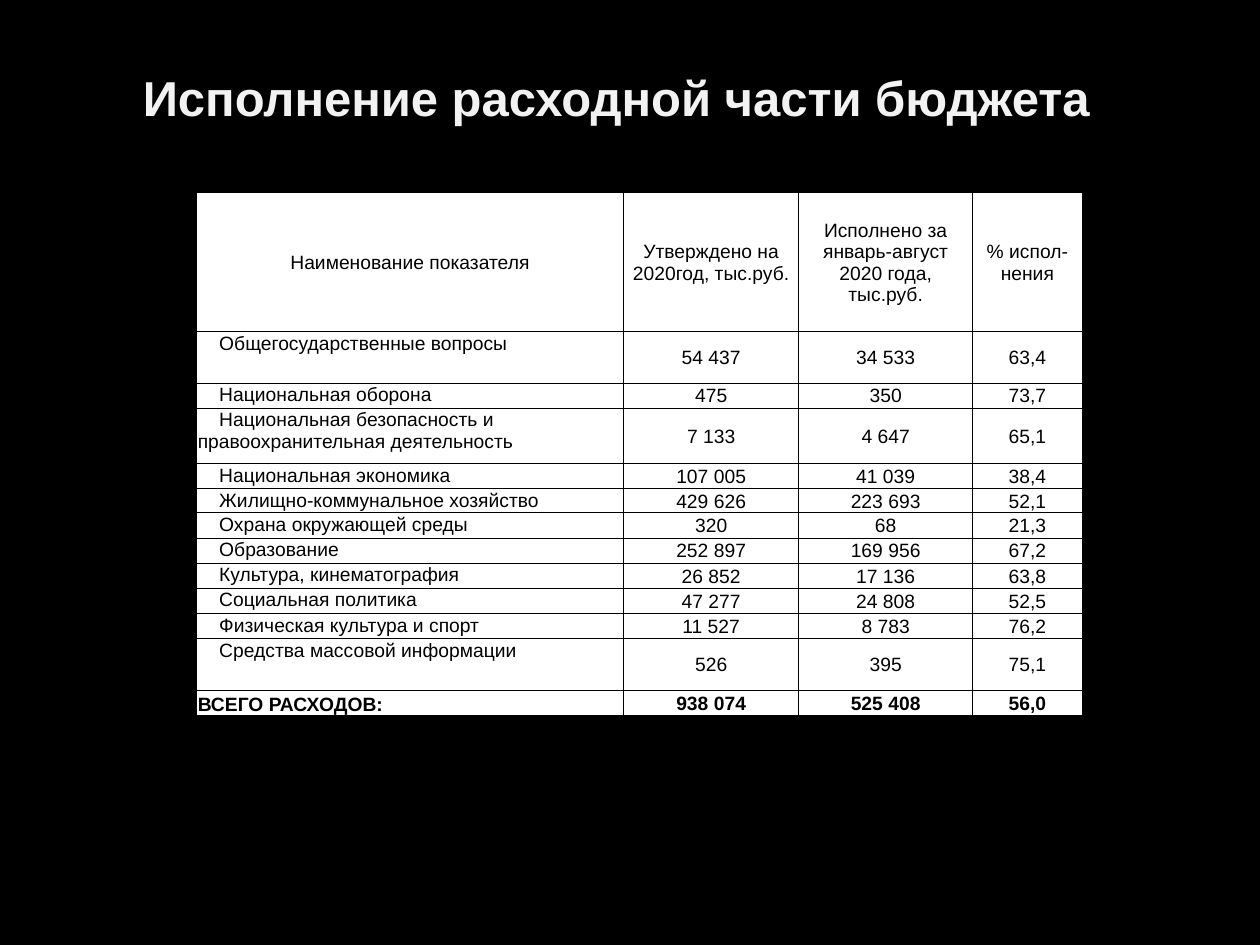
from dataclasses import dataclass

from lxml.etree import SubElement
from pptx import Presentation
from pptx.dml.color import RGBColor
from pptx.enum.text import MSO_ANCHOR, PP_ALIGN
from pptx.oxml.ns import qn
from pptx.util import Inches, Pt


@dataclass(frozen=True)
class Theme:
    font: str = "Arial"
    back: str = "000000"
    head: str = "F2F2F2"
    ink: str = "000000"
    cell: str = "FFFFFF"
    line: str = "000000"
    large: float = 28
    small: float = 11
    rule: float = 0.5


THEME = Theme()
TITLE = "Исполнение расходной части бюджета"
HEADS = (
    "Наименование показателя",
    "Утверждено на 2020год, тыс.руб.",
    "Исполнено за январь-август 2020 года, тыс.руб.",
    "% испол-нения",
)
ITEMS = (
    ("Общегосударственные вопросы", "54 437", "34 533", "63,4"),
    ("Национальная оборона", "475", "350", "73,7"),
    ("Национальная безопасность и правоохранительная деятельность",
     "7 133", "4 647", "65,1"),
    ("Национальная экономика", "107 005", "41 039", "38,4"),
    ("Жилищно-коммунальное хозяйство", "429 626", "223 693", "52,1"),
    ("Охрана окружающей среды", "320", "68", "21,3"),
    ("Образование", "252 897", "169 956", "67,2"),
    ("Культура, кинематография", "26 852", "17 136", "63,8"),
    ("Социальная политика", "47 277", "24 808", "52,5"),
    ("Физическая культура и спорт", "11 527", "8 783", "76,2"),
    ("Средства массовой информации", "526", "395", "75,1"),
)
TOTAL = ("ВСЕГО РАСХОДОВ:", "938 074", "525 408", "56,0")
WIDTHS = (3.39, 1.39, 1.38, 0.87)
SLIM = 0.2
TALL = {0: 1.1, 1: 0.41, 3: 0.44, 5: 0.19, 11: 0.41}


def add_run(para, text, size, color, bold=False):
    run = para.add_run()
    run.text = text
    font = run.font
    font.name, font.size, font.bold = THEME.font, Pt(size), bold
    font.color.rgb = RGBColor.from_string(color)


def add_rules(cell):
    props = cell._tc.get_or_add_tcPr()
    for side in ("lnL", "lnR", "lnT", "lnB"):
        line = SubElement(props, qn(f"a:{side}"), w=str(Pt(THEME.rule)))
        fill = SubElement(line, qn("a:solidFill"))
        SubElement(fill, qn("a:srgbClr"), val=THEME.line)


def fill_cell(cell, text, anchor, align, bold=False, indent=0):
    add_rules(cell)
    cell.fill.solid()
    cell.fill.fore_color.rgb = RGBColor.from_string(THEME.cell)
    cell.margin_left = cell.margin_right = cell.margin_top = Inches(0.01)
    cell.margin_bottom = 0
    cell.vertical_anchor = anchor
    para = cell.text_frame.paragraphs[0]
    para.alignment = align
    if indent:
        para._p.get_or_add_pPr().set("indent", str(Inches(indent)))
    add_run(para, text, THEME.small, THEME.ink, bold)


def place_title(slide, left, top, width, height):
    title = slide.shapes.title
    title.left, title.top = Inches(left), Inches(top)
    title.width, title.height = Inches(width), Inches(height)
    frame = title.text_frame
    frame.word_wrap = True
    frame.vertical_anchor = MSO_ANCHOR.MIDDLE
    frame.margin_right = Inches(0.32)
    para = frame.paragraphs[0]
    para.alignment = PP_ALIGN.CENTER
    add_run(para, TITLE, THEME.large, THEME.head, True)


def place_table(slide, left, top, width, height):
    rows = (HEADS, *ITEMS, TOTAL)
    table = slide.shapes.add_table(
        len(rows), len(WIDTHS), Inches(left), Inches(top),
        Inches(width), Inches(height)).table
    table.first_row = table.horz_banding = False
    for col, size in zip(table.columns, WIDTHS):
        col.width = Inches(size * width / sum(WIDTHS))
    last = len(rows) - 1
    for i, row in enumerate(rows):
        table.rows[i].height = Inches(TALL.get(i, SLIM))
        for j, text in enumerate(row):
            anchor, align, indent = MSO_ANCHOR.MIDDLE, PP_ALIGN.CENTER, 0
            if j == 0 and i > 0:
                align = PP_ALIGN.LEFT
                anchor = MSO_ANCHOR.BOTTOM if i == last else MSO_ANCHOR.TOP
                indent = 0 if i == last else 0.17
            fill_cell(table.cell(i, j), text, anchor, align, i == last, indent)


def main():
    deck = Presentation()
    deck.slide_width, deck.slide_height = Inches(10), Inches(7.5)
    slide = deck.slides.add_slide(deck.slide_layouts[5])
    back = slide.background.fill
    back.solid()
    back.fore_color.rgb = RGBColor.from_string(THEME.back)
    place_title(slide, 0.5, 0.29, 9, 0.96)
    place_table(slide, 1.56, 1.53, 7.03, 4.17)
    deck.save("out.pptx")


if __name__ == "__main__":
    main()
